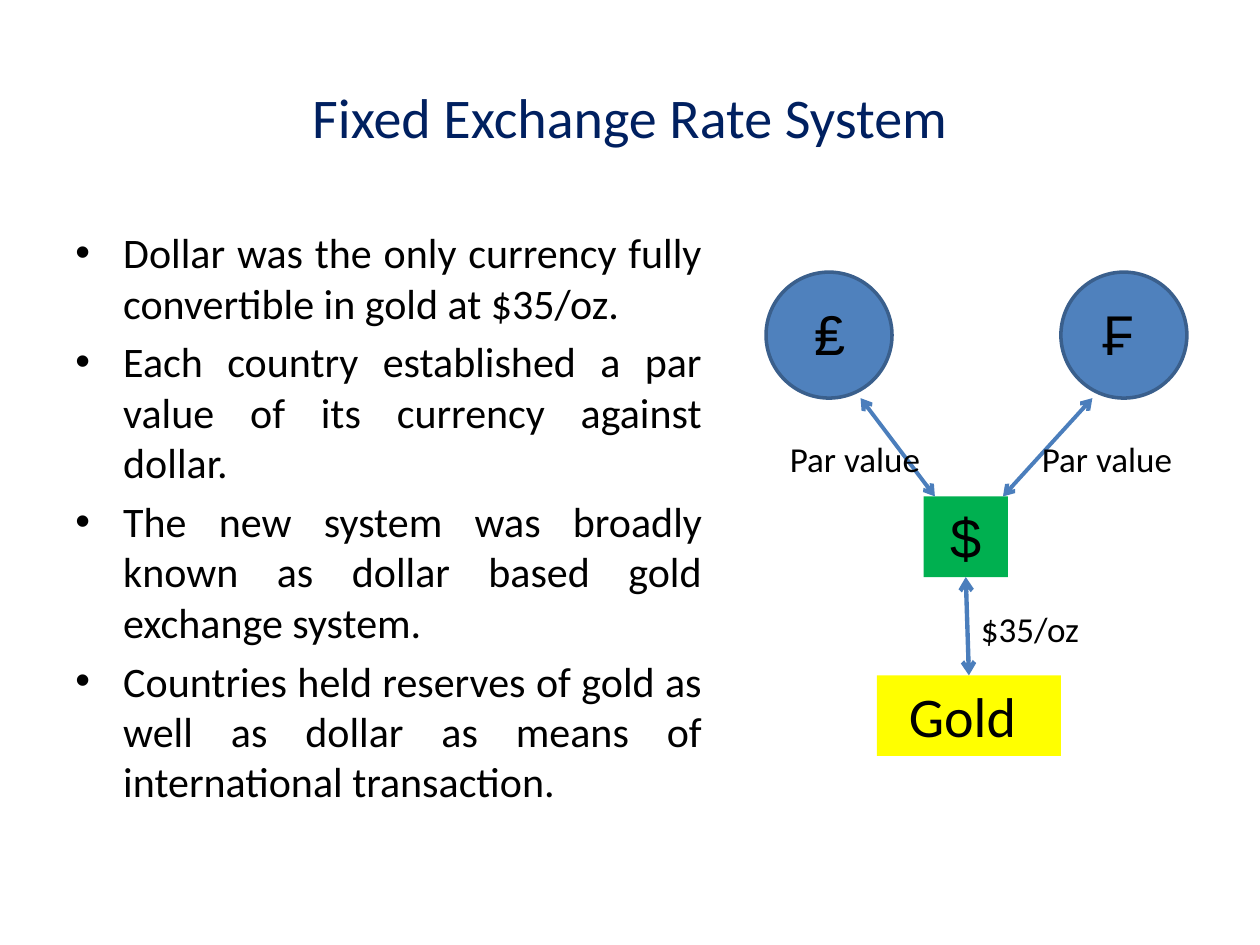
from lxml import etree
from pptx import Presentation
from pptx.dml.color import RGBColor
from pptx.enum import shapes, text
from pptx.oxml.ns import qn
from pptx.util import Inches, Pt

LEFT, CENTER, JUSTIFY = text.PP_ALIGN.LEFT, text.PP_ALIGN.CENTER, text.PP_ALIGN.JUSTIFY
BULLETS = [
    "Dollar was the only currency fully convertible in gold at $35/oz.",
    "Each country established a par value of its currency against dollar.",
    "The new system was broadly known as dollar based gold exchange system.",
    "Countries held reserves of gold as well as dollar as means of international transaction.",
]


def rgb(color):
    return RGBColor.from_string(color)


def add_bullet(p, indent):
    pPr = p._p.get_or_add_pPr()
    pPr.set("marL", str(indent))
    pPr.set("indent", str(-indent))
    etree.SubElement(pPr, qn("a:buFont")).set("typeface", "Arial")
    etree.SubElement(pPr, qn("a:buChar")).set("char", "•")


def write(sp, lines, size=32, font="Calibri", color="000000", align=CENTER,
          anchor=text.MSO_ANCHOR.TOP, wrap=True, bullets=False):
    tf = sp.text_frame
    tf.word_wrap = wrap
    tf.vertical_anchor = anchor
    for i, line in enumerate(lines):
        p = tf.add_paragraph() if i else tf.paragraphs[0]
        p.alignment = align
        if i:
            p.space_before = Pt(0.2 * size)
        if bullets:
            add_bullet(p, Inches(0.38))
        r = p.add_run()
        r.text = line
        r.font.size, r.font.name = Pt(size), font
        r.font.color.rgb = rgb(color)


def add_text(s, box, lines, **fmt):
    write(s.shapes.add_textbox(*map(Inches, box)), lines, **fmt)


def add_block(s, kind, box, fill, line=None):
    sp = s.shapes.add_shape(kind, *map(Inches, box))
    sp.shadow.inherit = False
    sp.fill.solid()
    sp.fill.fore_color.rgb = rgb(fill)
    if line:
        sp.line.color.rgb = rgb(line)
        sp.line.width = Pt(2)
    else:
        sp.line.fill.background()
    return sp


def add_double_arrow(s, start, end, width=2.25):
    cx = s.shapes.add_connector(shapes.MSO_CONNECTOR.STRAIGHT, *map(Inches, start + end))
    cx.line.color.rgb = rgb("4B7EBC")
    cx.line.width = Pt(width)
    ln = cx.line._get_or_add_ln()
    for tag in ("a:headEnd", "a:tailEnd"):
        etree.SubElement(ln, qn(tag)).set("type", "arrow")
    etree.SubElement(cx._element.spPr, qn("a:effectLst"))
    return cx


def add_currency(s, x, y, symbol, symbol_x):
    add_block(s, shapes.MSO_SHAPE.OVAL, (x, y, 1, 1), "4F81BD", "3A5F8C")
    add_text(s, (symbol_x, y + 0.17, 0.75, 0.64), [symbol], font="Arial")


def add_gold_diagram(s, x, y):
    """Two currencies pegged to the dollar, which is pegged to gold."""
    add_currency(s, x, y, "₤", x + 0.13)
    add_currency(s, x + 2.34, y, "₣", x + 2.42)

    rect = shapes.MSO_SHAPE.RECTANGLE
    dollar = add_block(s, rect, (x + 1.25, y + 1.78, 0.67, 0.64), "00B050")
    write(dollar, ["$"], font="Arial")
    gold = add_block(s, rect, (x + 0.88, y + 3.2, 1.46, 0.64), "FFFF00")
    write(gold, ["Gold "])

    add_double_arrow(s, (x + 0.75, y + 1), (x + 1.34, y + 1.78))
    add_double_arrow(s, (x + 2.59, y + 1), (x + 1.88, y + 1.78))
    peg = add_double_arrow(s, (x + 1.59, y + 2.42), (x + 1.61, y + 3.2), 2.5)
    peg.begin_connect(dollar, 2)
    peg.end_connect(gold, 0)

    for dx in (0.09, 2.09):
        add_text(s, (x + dx, y + 1.26, 1.25, 0.44), ["Par value"], size=20, align=LEFT)
    add_text(s, (x + 1.6, y + 2.61, 0.99, 0.44), ["$35/oz"], size=20, wrap=False)


def main():
    prs = Presentation()
    prs.slide_width, prs.slide_height = Inches(10), Inches(7.5)
    s = prs.slides.add_slide(prs.slide_layouts[6])
    add_text(s, (0.5, 0.3, 9, 1.25), ["Fixed Exchange Rate System"],
             color="002060", anchor=text.MSO_ANCHOR.MIDDLE)
    add_text(s, (0.5, 1.75, 5.17, 5.17), BULLETS, size=24, align=JUSTIFY, bullets=True)
    add_gold_diagram(s, 6.08, 2.16)
    prs.save("out.pptx")


if __name__ == "__main__":
    main()
